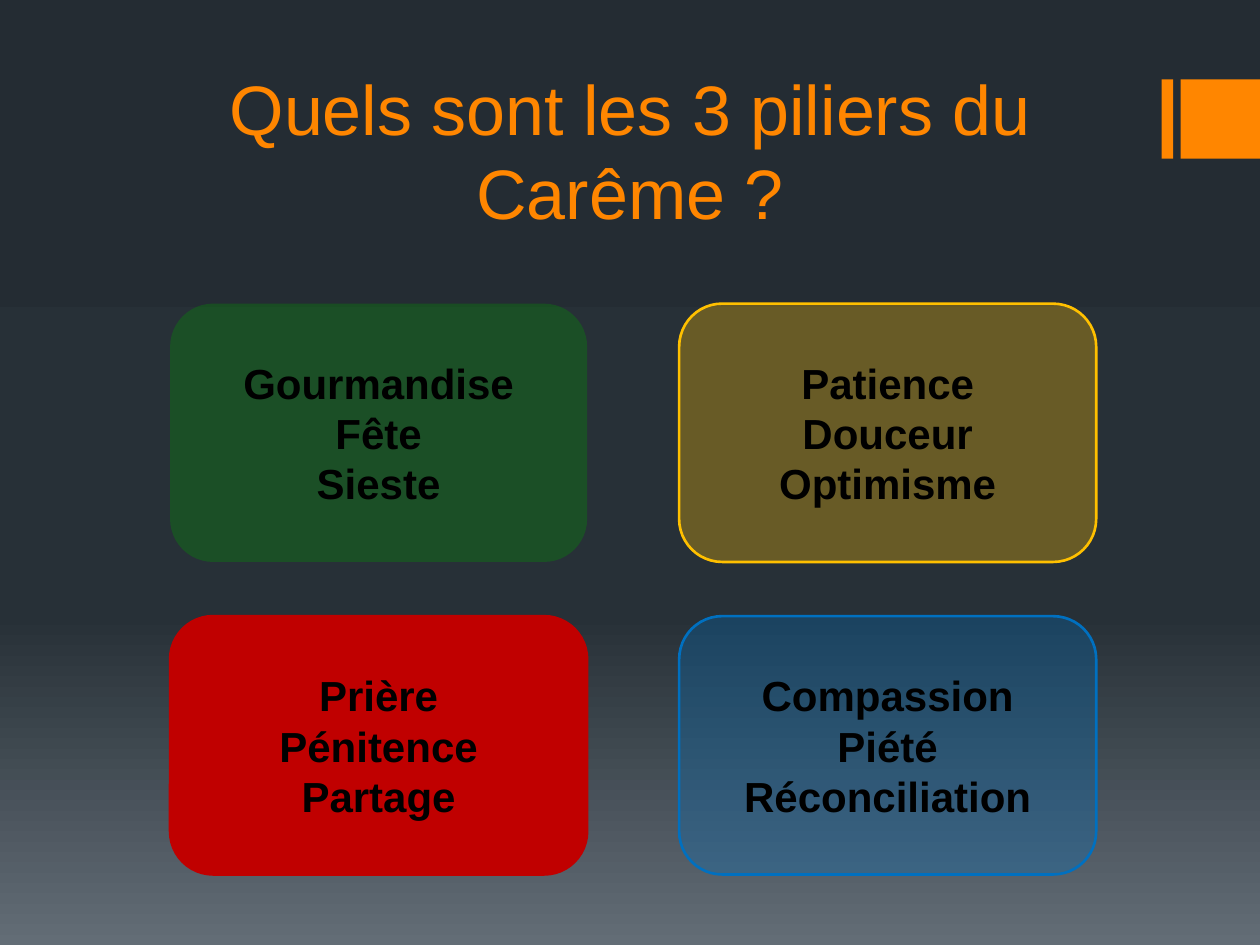
from lxml import etree
from pptx import Presentation
from pptx.dml.color import RGBColor
from pptx.enum.shapes import MSO_SHAPE
from pptx.enum.text import MSO_ANCHOR, PP_ALIGN
from pptx.oxml.ns import qn
from pptx.util import Inches, Pt

RECT, ROUND = MSO_SHAPE.RECTANGLE, MSO_SHAPE.ROUNDED_RECTANGLE
MIDDLE, CENTER = MSO_ANCHOR.MIDDLE, PP_ALIGN.CENTER

TITLE = "Quels sont les 3 piliers du Carême ?"
ORANGE = "FF8600"
STOPS = [(0, "242C33"), (65, "273037"), (100, "636D76")]
BARS = [(9.22, 0.09), (9.37, 0.63)]  # left, width
# words, fill, opacity in percent, outline
CARDS = [
    (["Gourmandise", "Fête", "Sieste"], "009900", 30, None),
    (["Patience", "Douceur", "Optimisme"], "FFC000", 30, "FFC000"),
    (["Prière", "Pénitence", "Partage"], "C00000", 100, "C00000"),
    (["Compassion", "Piété", "Réconciliation"], "0070C0", 30, "0070C0"),
]
LEFT, TOP, WIDTH, HEIGHT = 1.35, 2.41, 3.31, 2.05
STEP_X, STEP_Y = 4.04, 2.48


def rgb(code):
    return RGBColor.from_string(code)


def paint_back(slide):
    fill = slide.background.fill
    fill.gradient()
    grad = next(slide.element.iter(qn("a:gradFill")))
    stops = grad.find(qn("a:gsLst"))
    for old in list(stops):
        stops.remove(old)
    for pos, code in STOPS:
        stop = etree.SubElement(stops, qn("a:gs"), pos=str(pos * 1000))
        etree.SubElement(stop, qn("a:srgbClr"), val=code)
    grad.find(qn("a:lin")).set("ang", "5400000")  # top to bottom


def add_box(slide, kind, x, y, w, h, color, alpha=100, edge=None):
    box = slide.shapes.add_shape(kind, Inches(x), Inches(y), Inches(w), Inches(h))
    box.shadow.inherit = False
    box.fill.solid()
    box.fill.fore_color.rgb = rgb(color)
    if alpha < 100:
        tint = box.element.spPr.find(qn("a:solidFill"))[0]
        etree.SubElement(tint, qn("a:alpha"), val=str(alpha * 1000))
    if edge:
        box.line.color.rgb = rgb(edge)
        box.line.width = Pt(1.5)
    else:
        box.line.fill.background()
    return box


def set_text(shape, text, size, color, bold):
    frame = shape.text_frame
    frame.text = text
    frame.word_wrap = True
    frame.vertical_anchor = MIDDLE
    for para in frame.paragraphs:
        para.alignment = CENTER
        for run in para.runs:
            font = run.font
            font.name, font.size, font.bold = "Arial", Pt(size), bold
            font.color.rgb = rgb(color)


def main():
    deck = Presentation()
    deck.slide_width, deck.slide_height = Inches(10), Inches(7.5)
    slide = deck.slides.add_slide(deck.slide_layouts[5])
    paint_back(slide)

    for x, w in BARS:
        add_box(slide, RECT, x, 0.63, w, 0.63, ORANGE)

    title = slide.shapes.title
    title.left, title.top = Inches(1), Inches(0.36)
    title.width, title.height = Inches(8), Inches(1.65)
    set_text(title, TITLE, 40, ORANGE, False)

    for i, (words, color, alpha, edge) in enumerate(CARDS):
        row, col = divmod(i, 2)
        card = add_box(slide, ROUND, LEFT + col * STEP_X, TOP + row * STEP_Y,
                       WIDTH, HEIGHT, color, alpha, edge)
        set_text(card, "\n".join(words), 24, "000000", True)

    deck.save("out.pptx")


if __name__ == "__main__":
    main()
